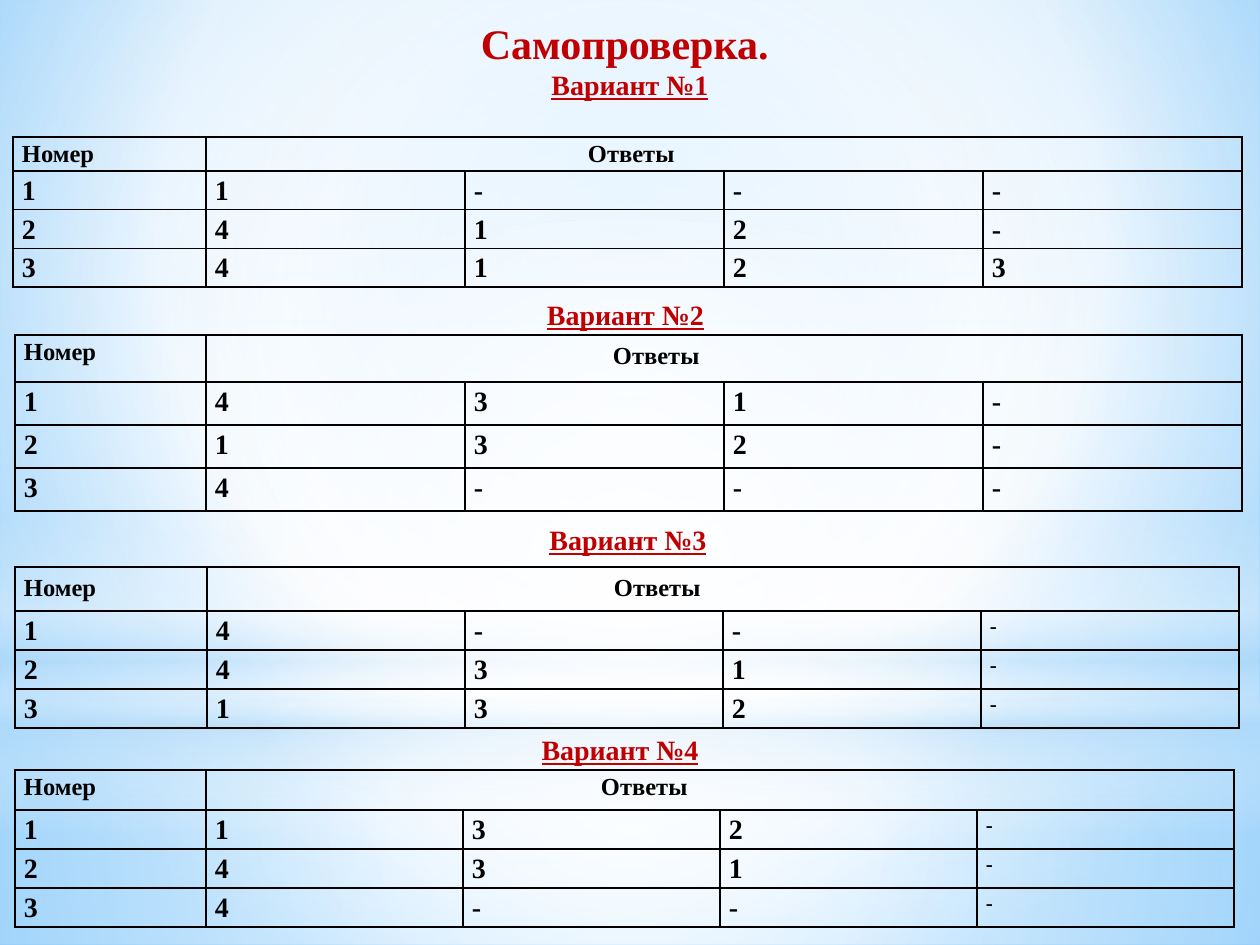
from dataclasses import dataclass

from lxml.etree import SubElement
from pptx import Presentation
from pptx.dml.color import RGBColor
from pptx.enum.shapes import MSO_SHAPE as Shape
from pptx.enum.text import MSO_ANCHOR as Anchor, PP_ALIGN as Align
from pptx.oxml.ns import qn
from pptx.oxml.xmlchemy import OxmlElement
from pptx.util import Emu, Pt

EMU_PER_PX = 914400 / 126
CENTRE = (50, 50, 50, 50)


def px(length):
    return Emu(round(length * EMU_PER_PX))


@dataclass(frozen=True)
class Theme:
    font: str = "Times New Roman"
    heading: str = "C00000"
    ink: str = "000000"
    white: str = "FFFFFF"
    sky: str = "B4DCFA"
    sky_mid: str = "9ED5FF"
    sky_deep: str = "5BB9FF"
    title_size: int = 24
    body_size: int = 16
    header_size: int = 14
    small_size: int = 12
    line_spacing: float = 1.15


@dataclass
class Answers:
    """One answer table; header_indent and header_drops place the header texts."""
    left: int
    top: int
    columns: tuple
    rows: tuple
    values: tuple
    header_indent: int
    header_drops: tuple = (0, 0)
    small_last: bool = False


class SlideBuilder:
    def __init__(self, page, theme):
        self.page = page
        self.theme = theme

    def set_gradient(self, fill, parent, stops, focus=None, angle=0):
        """Replace the fill in parent; stops hold position, colour and opacity."""
        fill.solid()
        solid = parent.find(".//" + qn("a:solidFill"))
        gradient = OxmlElement("a:gradFill")
        stop_list = SubElement(gradient, qn("a:gsLst"))
        for position, colour, opacity in stops:
            stop = SubElement(stop_list, qn("a:gs"), pos=str(position * 1000))
            shade = SubElement(stop, qn("a:srgbClr"), val=colour)
            if opacity < 100:
                SubElement(shade, qn("a:alpha"), val=str(opacity * 1000))
        if focus:
            circle = SubElement(gradient, qn("a:path"), path="circle")
            sides = {side: str(share * 1000) for side, share in zip("ltrb", focus)}
            SubElement(circle, qn("a:fillToRect"), **sides)
        else:
            SubElement(gradient, qn("a:lin"), ang=str(angle * 60000), scaled="0")
        solid.getparent().replace(solid, gradient)

    def backdrop(self, stops, focus):
        self.set_gradient(self.page.background.fill, self.page.element, stops, focus)

    def glow(self, kind, top, height, stops, focus=None, angle=0):
        """Full-width shape with a translucent gradient."""
        shape = self.page.shapes.add_shape(kind, 0, px(top), px(1260), px(height))
        shape.shadow.inherit = False
        shape.line.fill.background()
        self.set_gradient(shape.fill, shape.element.spPr, stops, focus, angle)

    def style(self, para, size, colour, underline=None):
        font = para.font
        font.name, font.size, font.bold = self.theme.font, Pt(size), True
        font.underline = underline
        font.color.rgb = RGBColor.from_string(colour)

    def heading(self, left, top, width, height, lines):
        """Centred lines, each given as text, size and underline."""
        box = self.page.shapes.add_textbox(px(left), px(top), px(width), px(height))
        frame = box.text_frame
        frame.word_wrap = True
        frame.vertical_anchor = Anchor.MIDDLE
        for index, (text, size, underline) in enumerate(lines):
            para = frame.add_paragraph() if index else frame.paragraphs[0]
            para.text = text
            para.alignment = Align.CENTER
            self.style(para, size, self.theme.heading, underline)

    def cell_frame(self, cell):
        """Clear the fill, draw the borders and set the margins."""
        properties = cell._tc.get_or_add_tcPr()
        for side in ("lnL", "lnR", "lnT", "lnB"):
            line = SubElement(properties, qn("a:" + side), w=str(Pt(1)))
            ink = SubElement(line, qn("a:solidFill"))
            SubElement(ink, qn("a:srgbClr"), val=self.theme.ink)
        cell.fill.background()
        cell.margin_left = cell.margin_right = px(9)
        cell.margin_top = cell.margin_bottom = 0

    def cell_text(self, cell, text, size, indent=0, drop=0):
        cell.margin_top = px(drop)
        para = cell.text_frame.paragraphs[0]
        para.text = text
        para.line_spacing = self.theme.line_spacing
        if indent:
            para._p.get_or_add_pPr().set("marL", str(px(indent)))
        self.style(para, size, self.theme.ink)

    def answer_table(self, answers):
        theme = self.theme
        table = self.page.shapes.add_table(
            len(answers.rows), len(answers.columns), px(answers.left), px(answers.top),
            px(sum(answers.columns)), px(sum(answers.rows))).table
        table.first_row = table.horz_banding = False
        for column, width in zip(table.columns, answers.columns):
            column.width = px(width)
        for row, height in zip(table.rows, answers.rows):
            row.height = px(height)
        for cell in table.iter_cells():
            self.cell_frame(cell)
        table.cell(0, 1).merge(table.cell(0, 4))
        number_drop, answer_drop = answers.header_drops
        self.cell_text(table.cell(0, 0), "Номер", theme.header_size, drop=number_drop)
        self.cell_text(table.cell(0, 1), "Ответы", theme.header_size,
                       answers.header_indent, answer_drop)
        for number, values in enumerate(answers.values, start=1):
            for column, text in enumerate(str(number) + values):
                small = answers.small_last and column == 4
                size = theme.small_size if small else theme.body_size
                self.cell_text(table.cell(number, column), text, size)


def main():
    deck = Presentation()
    deck.slide_width, deck.slide_height = px(1260), px(945)
    theme = Theme()
    white, sky = theme.white, theme.sky
    builder = SlideBuilder(deck.slides.add_slide(deck.slide_layouts[6]), theme)

    builder.backdrop([(0, theme.sky_mid, 100), (60, white, 100),
                      (100, theme.sky_deep, 100)], (20, 10, 20, 60))
    builder.glow(Shape.RECTANGLE, 703, 242,
                 [(0, white, 91), (37, white, 76), (100, sky, 79)], CENTRE)
    builder.glow(Shape.RECTANGLE, 0, 703,
                 [(0, white, 89), (48, white, 62), (100, sky, 79)], CENTRE)
    builder.glow(Shape.RECTANGLE, 519, 315,
                 [(0, white, 0), (29, white, 30), (45, sky, 40),
                  (55, white, 26), (65, sky, 60), (100, white, 0)], angle=90)
    builder.glow(Shape.OVAL, 220, 703, [(0, white, 100), (56, white, 0)], CENTRE)

    builder.heading(0, 11, 1260, 97, [("Самопроверка. ", theme.title_size, None),
                                      ("Вариант №1", theme.body_size, True)])
    for number, left, top, width in ((2, 15, 291, 1221), (3, 15, 516, 1226),
                                     (4, 54, 726, 1132)):
        builder.heading(left, top, width, 47,
                        [(f"Вариант №{number}", theme.body_size, True)])

    for answers in (
        Answers(13, 137, (193,) + (259,) * 4, (34, 36, 36, 36),
                ("1---", "412-", "4123"), 373),
        Answers(15, 335, (191,) + (259,) * 4, (47, 43, 43, 43),
                ("431-", "132-", "4---"), 398, (0, 4)),
        Answers(15, 567, (192,) + (258,) * 4, (44, 39, 39, 39),
                ("4---", "431-", "132-"), 398, (4, 4), True),
        Answers(15, 770, (191,) + (257,) * 4, (40, 39, 39, 39),
                ("132-", "431-", "4---"), 386, small_last=True),
    ):
        builder.answer_table(answers)
    deck.save("out.pptx")


if __name__ == "__main__":
    main()
